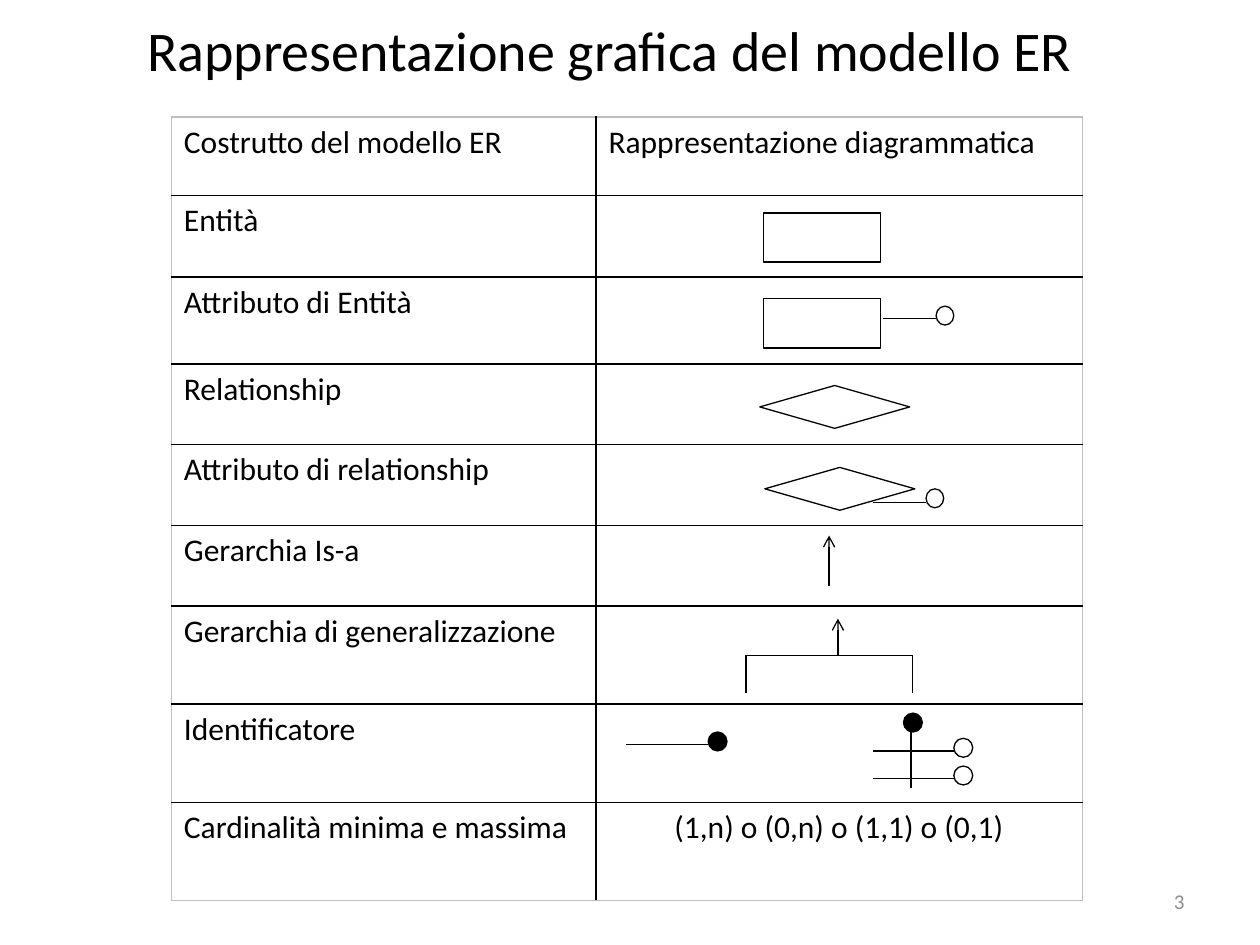
from pptx import Presentation
from pptx.dml.color import RGBColor
from pptx.enum.shapes import MSO_CONNECTOR, MSO_SHAPE
from pptx.enum.text import MSO_ANCHOR, PP_ALIGN
from pptx.oxml import parse_xml
from pptx.oxml.ns import nsdecls
from pptx.util import Inches, Pt

RECTANGLE, DIAMOND, OVAL = MSO_SHAPE.RECTANGLE, MSO_SHAPE.DIAMOND, MSO_SHAPE.OVAL
STRAIGHT = MSO_CONNECTOR.STRAIGHT
LEFT, CENTER, RIGHT = PP_ALIGN.LEFT, PP_ALIGN.CENTER, PP_ALIGN.RIGHT
MIDDLE = MSO_ANCHOR.MIDDLE
BLACK, WHITE, GRAY, FRAME = "000000", "FFFFFF", "8C8C8C", "BFBFBF"


def rgb(color):
    return RGBColor.from_string(color)


def write(frame, text, size=18, color=BLACK, align=LEFT):
    para = frame.paragraphs[0]
    para.alignment = align
    span = para.add_run()
    span.text = text
    span.font.name = "Calibri"
    span.font.size = Pt(size)
    span.font.color.rgb = rgb(color)


deck = Presentation()
deck.slide_width, deck.slide_height = Inches(10), Inches(7.5)
page = deck.slides.add_slide(deck.slide_layouts[5])

title = page.shapes.title
title.left, title.top, title.width, title.height = map(Inches, (0.13, 0.09, 9.42, 0.6))
title.text_frame.vertical_anchor = MIDDLE
write(title.text_frame, "Rappresentazione grafica del modello ER", size=32, align=CENTER)

# Table of constructs
rows = [
    (0.62, "Costrutto del modello ER", "Rappresentazione diagrammatica"),
    (0.65, "Entità", ""),
    (0.69, "Attributo di Entità", ""),
    (0.64, "Relationship", ""),
    (0.64, "Attributo di relationship", ""),
    (0.64, "Gerarchia Is-a", ""),
    (0.78, "Gerarchia di generalizzazione", ""),
    (0.78, "Identificatore", ""),
    (0.78, "Cardinalità minima e massima", "(1,n) o (0,n) o (1,1) o (0,1)"),
]
table = page.shapes.add_table(
    len(rows), 2, Inches(1.36), Inches(0.93), Inches(7.23), Inches(6.22)).table
table.first_row = table.horz_banding = False
table.columns[0].width, table.columns[1].width = Inches(3.37), Inches(3.86)
last_row = len(rows) - 1
for r, (height, *texts) in enumerate(rows):
    table.rows[r].height = Inches(height)
    for c, text in enumerate(texts):
        cell = table.cell(r, c)
        outer_sides = {"L": c == 0, "R": c == 1, "T": r == 0, "B": r == last_row}
        for side, outer in outer_sides.items():
            color = FRAME if outer else BLACK
            cell._tc.get_or_add_tcPr().append(parse_xml(
                f'<a:ln{side} {nsdecls("a")} w="12700"><a:solidFill>'
                f'<a:srgbClr val="{color}"/></a:solidFill></a:ln{side}>'))
        cell.fill.background()
        if text:
            write(cell.text_frame, text, align=CENTER if c and r == last_row else LEFT)

# Connecting lines: from, to, arrowhead
lines = [
    (7.01, 2.53, 7.43, 2.53, False),  # entity attribute
    (6.93, 3.99, 7.35, 3.99, False),  # relationship attribute
    (6.58, 4.65, 6.58, 4.25, True),   # is-a
    (6.65, 5.2, 6.65, 4.91, True),    # generalization
    (7.24, 5.2, 5.92, 5.2, False),
    (7.24, 5.5, 7.24, 5.2, False),
    (5.92, 5.5, 5.92, 5.2, False),
    (4.97, 5.91, 5.62, 5.91, False),  # simple identifier
    (6.93, 5.96, 7.57, 5.96, False),  # composite identifier
    (6.93, 6.18, 7.57, 6.18, False),
    (7.23, 5.81, 7.23, 6.25, False),
]
for *ends, arrow in lines:
    line = page.shapes.add_connector(STRAIGHT, *map(Inches, ends))
    line.line.color.rgb = rgb(BLACK)
    line.line.width = Pt(0.75)
    if arrow:
        line.line._get_or_add_ln().append(
            parse_xml(f'<a:tailEnd {nsdecls("a")} type="arrow"/>'))
    line._element.spPr.append(parse_xml(f'<a:effectLst {nsdecls("a")}/>'))

# Symbols: kind, left, top, width, height, fill, line width
symbols = [
    (RECTANGLE, 6.06, 1.69, 0.93, 0.39, None, 1),
    (RECTANGLE, 6.06, 2.37, 0.93, 0.39, None, 1),
    (OVAL, 7.43, 2.43, 0.14, 0.15, None, 0.75),
    (DIAMOND, 6.03, 3.06, 1.19, 0.34, None, 0.75),
    (DIAMOND, 6.07, 3.71, 1.19, 0.34, None, 0.75),
    (OVAL, 7.35, 3.88, 0.14, 0.15, None, 0.75),
    (OVAL, 5.62, 5.81, 0.15, 0.15, BLACK, 0.75),
    (OVAL, 7.57, 5.86, 0.15, 0.15, WHITE, 0.75),
    (OVAL, 7.57, 6.08, 0.15, 0.15, WHITE, 0.75),
    (OVAL, 7.17, 5.66, 0.15, 0.15, BLACK, 0.75),
]
for kind, left, top, width, height, fill, weight in symbols:
    symbol = page.shapes.add_shape(kind, *map(Inches, (left, top, width, height)))
    symbol.shadow.inherit = False
    symbol.line.color.rgb = rgb(BLACK)
    symbol.line.width = Pt(weight)
    if fill:
        symbol.fill.solid()
        symbol.fill.fore_color.rgb = rgb(fill)
    else:
        symbol.fill.background()

number_box = page.shapes.add_textbox(*map(Inches, (7.17, 6.95, 2.33, 0.4)))
number_box.text_frame.word_wrap = True
number_box.text_frame.vertical_anchor = MIDDLE
write(number_box.text_frame, "3", size=12, color=GRAY, align=RIGHT)

deck.save("out.pptx")
